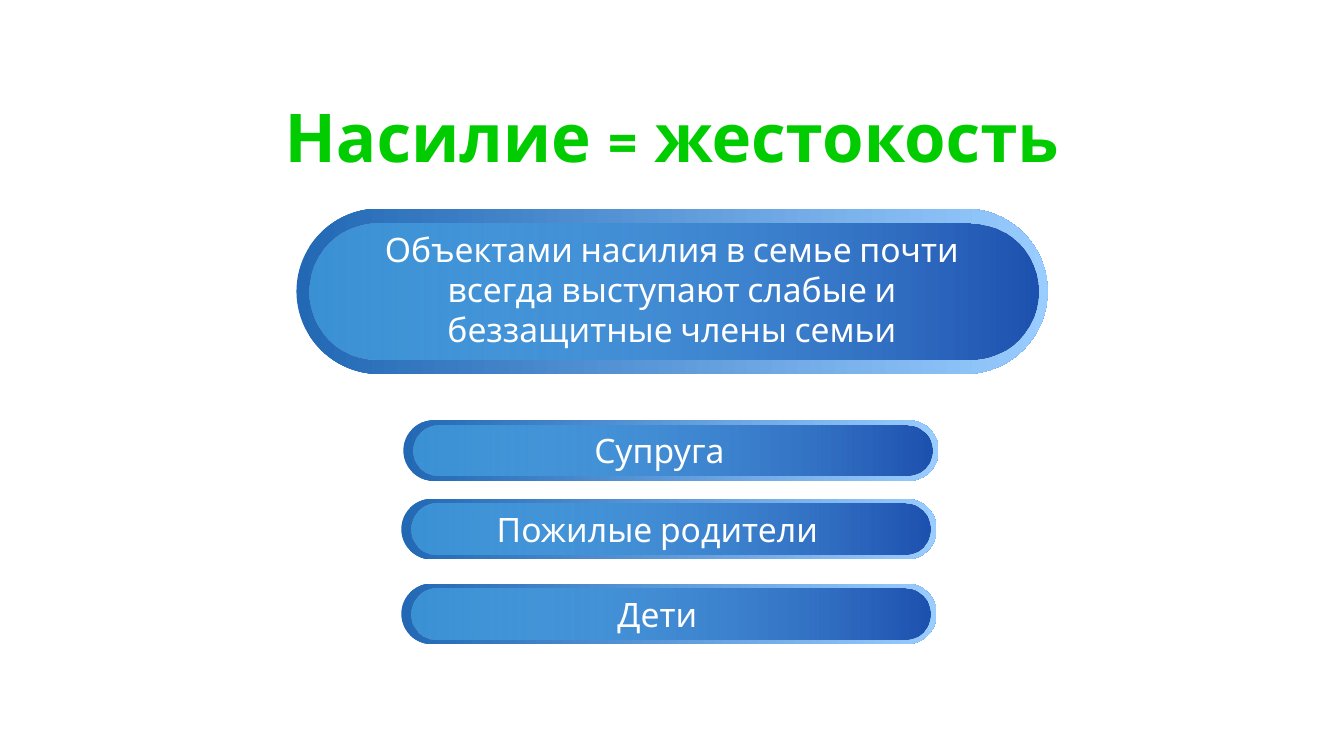
from lxml.etree import SubElement as Sub
from pptx import Presentation
from pptx.dml.color import RGBColor
from pptx.enum.shapes import MSO_SHAPE as Kind
from pptx.enum.text import MSO_ANCHOR as Anchor, PP_ALIGN as Align
from pptx.oxml import parse_xml
from pptx.oxml.ns import nsdecls, qn
from pptx.util import Inches, Pt

FONT = "Cabin"
GREEN = RGBColor(0x00, 0xCC, 0x00)
OLIVE = RGBColor(0xB1, 0xC4, 0x00)
WHITE = RGBColor(0xFF, 0xFF, 0xFF)
SHADE = RGBColor(0x80, 0x80, 0x80)
STEEL = RGBColor(0x22, 0x68, 0xB4)
PALE = RGBColor(0x99, 0xCC, 0xFF)
SKY = RGBColor(0x51, 0xB9, 0xF3)
NAVY = RGBColor(0x1E, 0x52, 0xB0)


def add_text(shapes, text, area, size=24, color=WHITE, bold=False,
             anchor=Anchor.TOP, edge=None, shadow=False):
    box = shapes.add_textbox(*map(Inches, area))
    frame = box.text_frame
    frame.word_wrap = True
    frame.vertical_anchor = anchor
    para = frame.paragraphs[0]
    para.alignment = Align.CENTER
    run = para.add_run()
    run.text = text
    font = run.font
    font.name, font.size, font.bold = FONT, Pt(size), bold
    font.color.rgb = color
    props = run._r.get_or_add_rPr()
    if edge:
        props.insert(0, parse_xml(
            f'<a:ln {nsdecls("a")} w="9525"><a:solidFill>'
            f'<a:srgbClr val="{edge}"/></a:solidFill></a:ln>'))
    if shadow:
        props.find(qn("a:solidFill")).addnext(parse_xml(
            f'<a:effectLst {nsdecls("a")}><a:outerShdw dist="35921" dir="2700000">'
            f'<a:srgbClr val="{SHADE}"/></a:outerShdw></a:effectLst>'))


def add_pill(shapes, area, start, end, alpha=None):
    pill = shapes.add_shape(Kind.ROUNDED_RECTANGLE, *map(Inches, area))
    pill.adjustments[0] = 0.5
    pill.shadow.inherit = False
    pill.line.fill.background()
    pill.fill.gradient()
    pill.fill.gradient_angle = 0
    for stop, color in zip(pill.fill.gradient_stops, (start, end)):
        stop.color.rgb = color
    if alpha:
        first = next(pill._element.spPr.iter(qn("a:srgbClr")))
        Sub(first, qn("a:alpha"), val=str(alpha * 1000))


def add_button(slide, text, outer, inner, label):
    shapes = slide.shapes.add_group_shape().shapes
    add_pill(shapes, outer, STEEL, PALE)
    add_pill(shapes, inner, SKY, NAVY, alpha=50)
    add_text(shapes, text, label, shadow=True)


def main():
    deck = Presentation()
    deck.slide_width, deck.slide_height = Inches(13.33), Inches(7.5)
    slide = deck.slides.add_slide(deck.slide_layouts[6])
    add_text(slide.shapes, "Насилие = жестокость", (0, 0.86, 13.33, 0.98),
             size=48, color=GREEN, bold=True, anchor=Anchor.MIDDLE, edge=OLIVE)
    add_button(slide, "Объектами насилия в семье почти всегда выступают "
               "слабые и беззащитные члены семьи",
               (2.94, 2.07, 7.45, 1.64), (3.07, 2.22, 7.23, 1.35),
               (3.45, 2.22, 6.43, 1.31))
    for text, left, top in (("Супруга", 4, 4.17),
                            ("Пожилые родители", 3.98, 4.95),
                            ("Дети", 3.98, 5.79)):
        add_button(slide, text, (left, top, 5.31, 0.6),
                   (left + 0.1, top + 0.05, 5.15, 0.5),
                   (left + 0.25, top + 0.05, 4.58, 0.5))
    deck.save("out.pptx")


if __name__ == "__main__":
    main()
